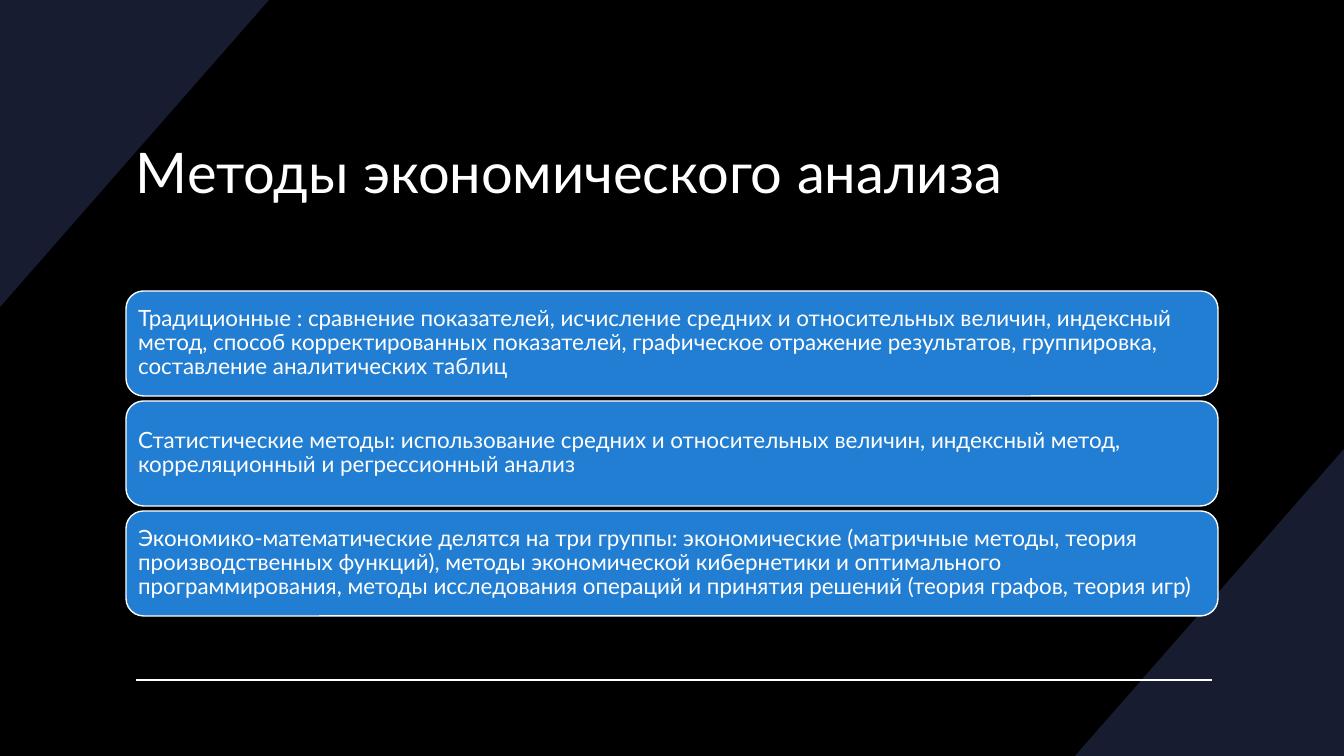
from dataclasses import dataclass

from lxml import etree
from pptx import Presentation
from pptx.dml.color import RGBColor
from pptx.enum.shapes import MSO_CONNECTOR, MSO_SHAPE
from pptx.enum.text import MSO_ANCHOR, PP_ALIGN
from pptx.oxml.ns import qn
from pptx.util import Emu, Pt

ROUNDED = MSO_SHAPE.ROUNDED_RECTANGLE
STRAIGHT = MSO_CONNECTOR.STRAIGHT
MIDDLE = MSO_ANCHOR.MIDDLE
LEFT = PP_ALIGN.LEFT

BLACK = RGBColor(0x00, 0x00, 0x00)
WHITE = RGBColor(0xFF, 0xFF, 0xFF)
NAVY = RGBColor(0x18, 0x1C, 0x30)
BLUE = RGBColor(0x21, 0x7E, 0xD3)
FONT = "Lato"

PAGE_WIDTH, PAGE_HEIGHT = 1344, 756
CORNER_WIDTH, CORNER_HEIGHT = 269, 307
CONTENT_LEFT, CONTENT_WIDTH = 126, 1092
CARD_TOP, CARD_HEIGHT, CARD_STEP = 291, 105, 110


@dataclass(frozen=True)
class Corner:
    """A right triangle filling one corner of the page."""
    x: int
    y: int
    x_direction: int
    y_direction: int


CORNERS = (
    Corner(PAGE_WIDTH, PAGE_HEIGHT, -1, -1),
    Corner(0, 0, 1, 1),
)
METHODS = (
    "Традиционные : сравнение показателей, исчисление средних и относительных "
    "величин, индексный метод, способ корректированных показателей, графическое "
    "отражение результатов, группировка, составление аналитических таблиц",
    "Статистические методы: использование средних и относительных величин, "
    "индексный метод, корреляционный и регрессионный анализ",
    "Экономико-математические делятся на три группы: экономические (матричные "
    "методы, теория производственных функций), методы экономической кибернетики "
    "и оптимального программирования, методы исследования операций и принятия "
    "решений (теория графов, теория игр)",
)


def px(length: int) -> Emu:
    return Emu(round(length * 914400 / 100.8))


def write(box, text: str, *, size: int, inset: int, spacing: float = 1.0) -> None:
    frame = box.text_frame
    frame.word_wrap = True
    frame.vertical_anchor = MIDDLE
    frame.margin_left = frame.margin_right = px(inset)
    frame.margin_top = frame.margin_bottom = px(inset)
    para = frame.paragraphs[0]
    para.alignment = LEFT
    para.line_spacing = spacing
    span = para.add_run()
    span.text = text
    span.font.name = FONT
    span.font.size = Pt(size)
    span.font.color.rgb = WHITE


def add_corner(page, corner: Corner) -> None:
    far_x = corner.x + corner.x_direction * CORNER_WIDTH
    far_y = corner.y + corner.y_direction * CORNER_HEIGHT
    builder = page.shapes.build_freeform(px(corner.x), px(far_y))
    builder.add_line_segments(
        [(px(corner.x), px(corner.y)), (px(far_x), px(corner.y))], close=True
    )
    triangle = builder.convert_to_shape()
    triangle.shadow.inherit = False
    triangle.fill.solid()
    triangle.fill.fore_color.rgb = NAVY
    triangle.line.fill.background()


def add_rule(page, left: int, right: int, y: int) -> None:
    rule = page.shapes.add_connector(STRAIGHT, px(left), px(y), px(right), px(y))
    rule.line.color.rgb = WHITE
    rule.line.width = Pt(1)
    etree.SubElement(rule._element.spPr, qn("a:effectLst"))


def add_card(page, top: int, text: str) -> None:
    card = page.shapes.add_shape(
        ROUNDED, px(CONTENT_LEFT), px(top), px(CONTENT_WIDTH), px(CARD_HEIGHT)
    )
    card.shadow.inherit = False
    card.fill.solid()
    card.fill.fore_color.rgb = BLUE
    card.line.color.rgb = WHITE
    card.line.width = Pt(1)
    write(card, text, size=16, inset=7, spacing=0.9)


def main() -> None:
    deck = Presentation()
    deck.slide_width, deck.slide_height = px(PAGE_WIDTH), px(PAGE_HEIGHT)
    page = deck.slides.add_slide(deck.slide_layouts[6])

    # Background, corner triangles and bottom rule
    page.background.fill.solid()
    page.background.fill.fore_color.rgb = BLACK
    for corner in CORNERS:
        add_corner(page, corner)
    add_rule(page, 136, 1212, 680)

    # Title
    title = page.shapes.add_textbox(
        px(CONTENT_LEFT), px(96), px(CONTENT_WIDTH), px(150)
    )
    write(title, "Методы экономического анализа", size=40, inset=10)

    # Method cards
    for row, method in enumerate(METHODS):
        add_card(page, CARD_TOP + row * CARD_STEP, method)

    deck.save("out.pptx")


if __name__ == "__main__":
    main()
